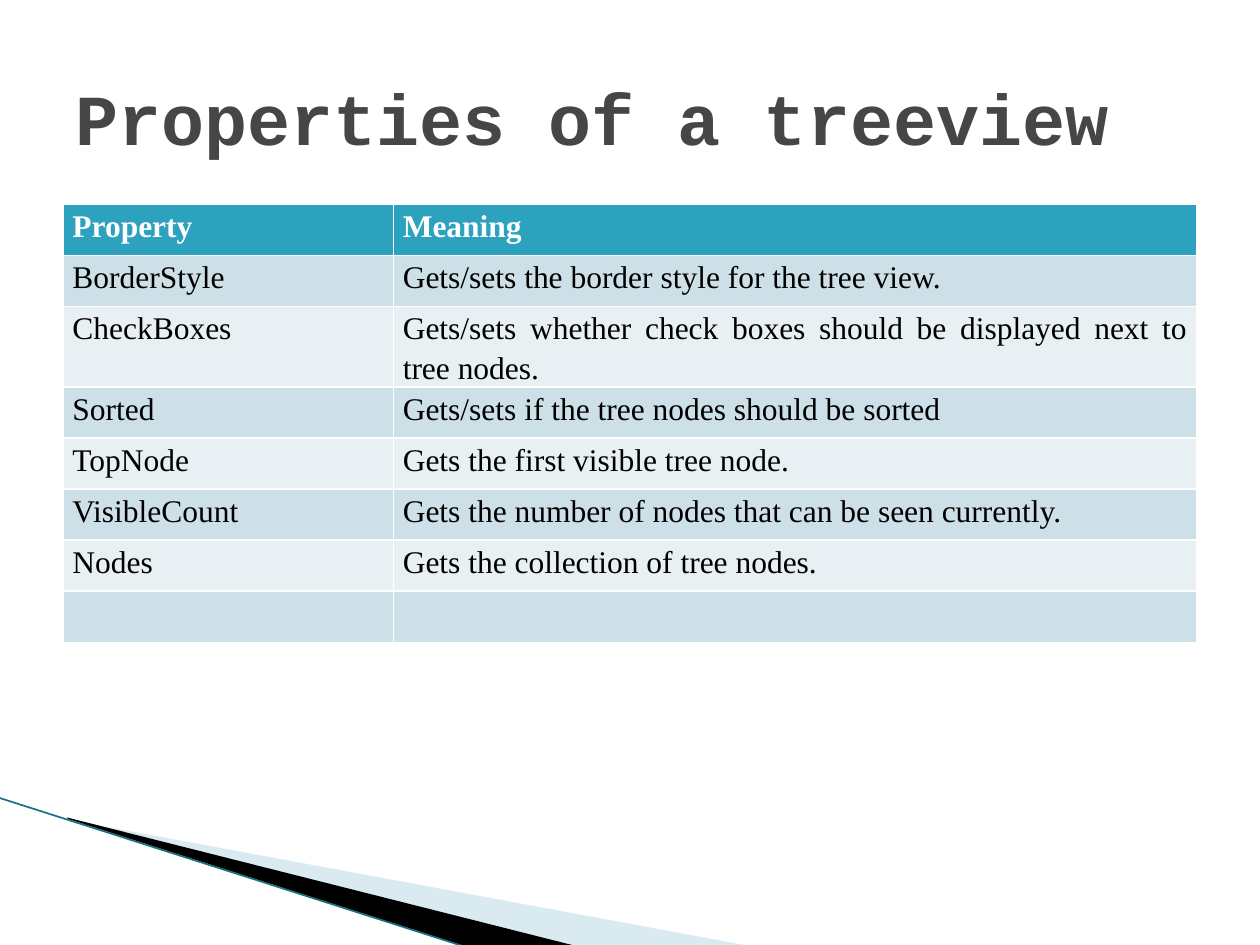
from lxml import etree
from pptx import Presentation
from pptx.dml.color import RGBColor
from pptx.enum.shapes import MSO_CONNECTOR
from pptx.enum.text import MSO_ANCHOR, PP_ALIGN
from pptx.oxml.ns import qn
from pptx.util import Cm, Pt

COLORS = {
    "title": "464646",
    "header": "2DA2BF",
    "band_dark": "CDE0E8",
    "band_light": "E8F0F4",
    "white": "FFFFFF",
    "black": "000000",
    "pale_wedge": "A0CBDC",
    "edge": "1B7083",
}
ROWS = [
    ("Property", "Meaning"),
    ("BorderStyle", "Gets/sets the border style for the tree view."),
    ("CheckBoxes", "Gets/sets whether check boxes should be displayed next to tree nodes."),
    ("Sorted", "Gets/sets if the tree nodes should be sorted"),
    ("TopNode", "Gets the first visible tree node."),
    ("VisibleCount", "Gets the number of nodes that can be seen currently."),
    ("Nodes", "Gets the collection of tree nodes."),
    ("", ""),
]


def color(name):
    return RGBColor.from_string(COLORS[name])


presentation = Presentation()
presentation.slide_width = Cm(25.4)
presentation.slide_height = Cm(19.05)
slide = presentation.slides.add_slide(presentation.slide_layouts[6])

# Corner wedges: name, opacity, frame, outline (the outline reaches past its frame)
wedges = [
    ("pale_wedge", 40, (1.98, 13.89, 10.57, 4.01),
     [(1.4, 16.53), (15.11, 19.07), (11.58, 19.07), (1.4, 16.51)]),
    ("black", 100, (-0.15, 16.08, 10.57, 2.34),
     [(1.35, 16.48), (11.61, 19.07), (9.45, 19.1), (1.37, 16.51)]),
]
for name, opacity, frame, points in wedges:
    start, *others = [(Cm(x), Cm(y)) for x, y in points]
    builder = slide.shapes.build_freeform(*start)
    builder.add_line_segments(others)
    wedge = builder.convert_to_shape()
    left, top, width, height = [Cm(length) for length in frame]
    shift_x, shift_y = wedge.left - left, wedge.top - top
    wedge.left, wedge.top, wedge.width, wedge.height = left, top, width, height
    outline = next(wedge._element.iter(qn("a:path")))
    outline.set("w", str(width))
    outline.set("h", str(height))
    for point in outline.iter(qn("a:pt")):
        point.set("x", str(int(point.get("x")) + shift_x))
        point.set("y", str(int(point.get("y")) + shift_y))
    wedge.shadow.inherit = False
    wedge.fill.solid()
    wedge.fill.fore_color.rgb = color(name)
    wedge.line.fill.background()
    if opacity < 100:
        wedge_color = wedge._element.spPr.find(f"{qn('a:solidFill')}/{qn('a:srgbClr')}")
        etree.SubElement(wedge_color, qn("a:alpha"), val=str(opacity * 1000))

# Corner edge line
edge = slide.shapes.add_connector(
    MSO_CONNECTOR.STRAIGHT, Cm(-0.03), Cm(16.08), Cm(9.42), Cm(19.1))
edge.line.color.rgb = color("edge")
edge.line.width = Pt(0.95)
etree.SubElement(edge._element.spPr, qn("a:effectLst"))

# Property table, with the white rules of the default table style
row_height = Cm(1.03)
table = slide.shapes.add_table(
    len(ROWS), 2, Cm(1.27), Cm(4.12), Cm(22.86), row_height * len(ROWS)).table
for column, width in zip(table.columns, (6.66, 16.2)):
    column.width = Cm(width)
for row_index, texts in enumerate(ROWS):
    table.rows[row_index].height = row_height
    is_header = row_index == 0
    band = "header" if is_header else ("band_light", "band_dark")[row_index % 2]
    for column_index, text in enumerate(texts):
        cell = table.cell(row_index, column_index)
        cell.margin_left = cell.margin_right = Cm(0.19)
        cell.margin_top = cell.margin_bottom = 0
        cell.fill.solid()
        cell.fill.fore_color.rgb = color(band)
        paragraph = cell.text_frame.paragraphs[0]
        paragraph.alignment = PP_ALIGN.JUSTIFY
        paragraph.line_spacing = 1.15
        paragraph.font.size = Pt(18)
        if text:
            run = paragraph.add_run()
            run.text = text
            run.font.name = "Times New Roman"
            run.font.size = Pt(18)
            run.font.bold = is_header
            run.font.color.rgb = color("white" if is_header else "black")

# Title
title = slide.shapes.add_textbox(Cm(1.27), Cm(0.76), Cm(22.86), Cm(3.18))
title.text_frame.word_wrap = True
title.text_frame.vertical_anchor = MSO_ANCHOR.MIDDLE
run = title.text_frame.paragraphs[0].add_run()
run.text = "Properties of a treeview"
run.font.name = "Courier New"
run.font.size = Pt(41)
run.font.bold = True
run.font.color.rgb = color("title")

presentation.save("out.pptx")
